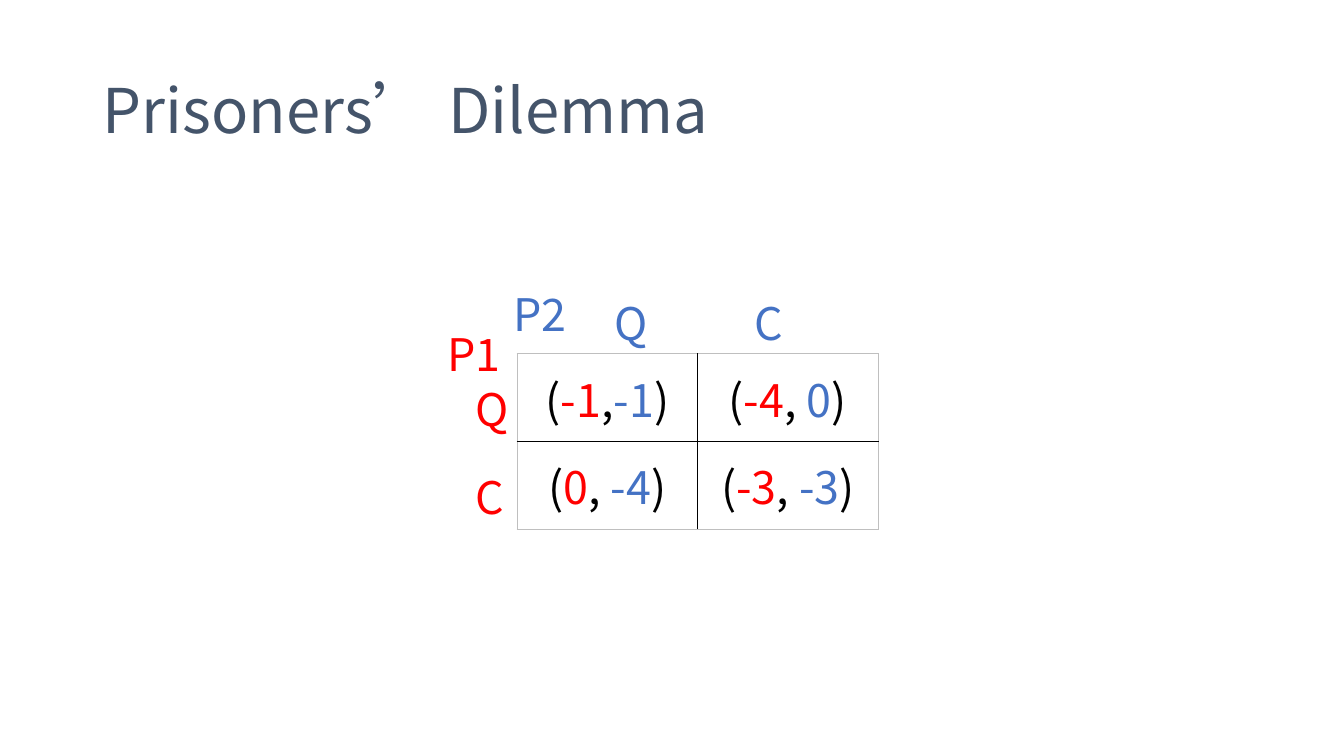
"""Build the Prisoners' Dilemma payoff slide."""
from dataclasses import dataclass

from lxml import etree
from pptx import Presentation
from pptx.dml.color import RGBColor
from pptx.enum.text import MSO_ANCHOR, MSO_AUTO_SIZE, PP_ALIGN
from pptx.oxml.ns import qn
from pptx.util import Emu, Pt

MIDDLE, TOP = MSO_ANCHOR.MIDDLE, MSO_ANCHOR.TOP
CENTER, LEFT = PP_ALIGN.CENTER, PP_ALIGN.LEFT
GROW, FIXED = MSO_AUTO_SIZE.SHAPE_TO_FIT_TEXT, MSO_AUTO_SIZE.NONE
PX = 9144


@dataclass(frozen=True)
class Theme:
    """Colours, type sizes and line widths."""
    font: str = "Noto Sans CJK SC"
    heading: str = "44546A"
    ink: str = "000000"
    player1: str = "FF0000"
    player2: str = "4472C4"
    frame: str = "BFBFBF"
    heading_size: int = 44
    body_size: int = 32
    rule: int = 1


def px(length):
    """Turn px into EMU."""
    return Emu(length * PX)


def apply(target, values):
    """Set each named attribute of the target."""
    for name, value in values.items():
        setattr(target, name, value)


class Board:
    """Draws elements on one slide in one theme."""

    def __init__(self, slide, theme):
        """Keep the slide and its theme."""
        self.slide, self.theme = slide, theme

    def run(self, paragraph, wording, color, size):
        """Add a coloured run."""
        run = paragraph.add_run()
        run.text = wording
        apply(run.font, {"name": self.theme.font, "size": Pt(size)})
        run.font.color.rgb = RGBColor.from_string(color)
        east_asian = etree.SubElement(run.font._element, qn("a:ea"))
        east_asian.set("typeface", self.theme.font)

    def text(self, box, wording, color, size, frame_format, spacing=1.0):
        """Add a text box holding one run."""
        frame = self.slide.shapes.add_textbox(*map(px, box)).text_frame
        apply(frame, frame_format)
        paragraph = frame.paragraphs[0]
        apply(paragraph, {"alignment": LEFT, "line_spacing": spacing})
        self.run(paragraph, wording, color, size)

    def title(self, box, wording):
        """Add the slide heading."""
        self.text(box, wording, self.theme.heading, self.theme.heading_size,
                  {"word_wrap": True, "vertical_anchor": MIDDLE, "auto_size": FIXED}, 0.9)

    def label(self, left, top, width, wording, color):
        """Add a player or strategy label."""
        self.text((left, top, width, 64), wording, color, self.theme.body_size,
                  {"word_wrap": False, "vertical_anchor": TOP, "auto_size": GROW})

    def border(self, cell, side, color):
        """Rule one side of a cell."""
        line = etree.SubElement(cell._tc.get_or_add_tcPr(), qn(f"a:ln{side}"),
                                w=str(Pt(self.theme.rule)))
        fill = etree.SubElement(line, qn("a:solidFill"))
        etree.SubElement(fill, qn("a:srgbClr"), val=color)

    def payoffs(self, left, top, column, row, games):
        """Add the payoff table with a frame and inner cross."""
        theme = self.theme
        last_row, last_column = len(games) - 1, len(games[0]) - 1
        table = self.slide.shapes.add_table(
            len(games), len(games[0]), px(left), px(top),
            px(column * len(games[0])), px(row * len(games))).table
        apply(table, {"first_row": False, "horz_banding": False})
        for r, line in enumerate(games):
            for c, (first, comma, second) in enumerate(line):
                cell = table.cell(r, c)
                edges = {"L": c == 0, "R": c == last_column,
                         "T": r == 0, "B": r == last_row}
                for side, outer in edges.items():
                    self.border(cell, side, theme.frame if outer else theme.ink)
                cell.fill.background()
                cell.vertical_anchor = MIDDLE
                paragraph = cell.text_frame.paragraphs[0]
                paragraph.alignment = CENTER
                for wording, color in (("(", theme.ink), (first, theme.player1),
                                       (comma, theme.ink), (second, theme.player2),
                                       (")", theme.ink)):
                    self.run(paragraph, wording, color, theme.body_size)


def main():
    """Compose and save the slide."""
    deck = Presentation()
    apply(deck, {"slide_width": px(1333), "slide_height": px(750)})
    theme = Theme()
    board = Board(deck.slides.add_slide(deck.slide_layouts[6]), theme)

    board.title((92, 40, 1150, 145), "Prisoners’ Dilemma")
    board.payoffs(513, 351, 179, 87, [
        [("-1", ",", "-1"), ("-4", ", ", "0")],
        [("0", ", ", "-4"), ("-3", ", ", "-3")],
    ])
    for left, top, width, wording, color in (
            (600, 288, 59, "Q", theme.player2),
            (738, 288, 52, "C", theme.player2),
            (462, 374, 59, "Q", theme.player1),
            (462, 461, 52, "C", theme.player1),
            (434, 319, 77, "P1", theme.player1),
            (499, 280, 77, "P2", theme.player2)):
        board.label(left, top, width, wording, color)
    deck.save("out.pptx")


if __name__ == "__main__":
    main()
